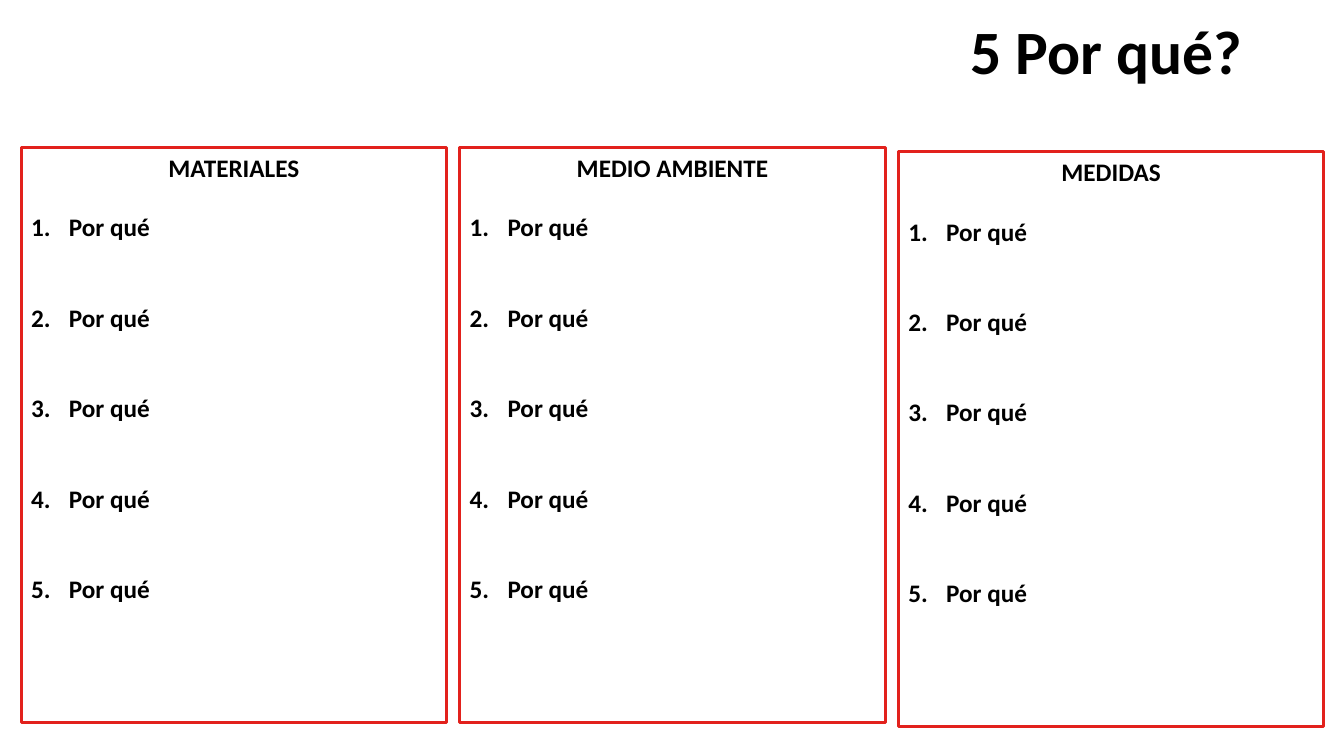
from lxml.etree import SubElement
from pptx import Presentation
from pptx.dml.color import RGBColor
from pptx.enum.shapes import MSO_SHAPE
from pptx.enum.text import MSO_ANCHOR, PP_ALIGN
from pptx.oxml.ns import qn
from pptx.util import Inches, Pt

COLORS = {"text": "000000", "frame": "E2211C", "background": "FFFFFF"}
FONT = "Calibri"
CATEGORIES = [("MATERIALES", 0), ("MEDIO AMBIENTE", 0), ("MEDIDAS", 0.04)]
WHY_COUNT = 5
COLUMN_LEFT, COLUMN_TOP = 0.21, 1.46
COLUMN_WIDTH, COLUMN_HEIGHT = 4.22, 5.71
COLUMN_STEP = 4.35


def color(name):
    """Return a named colour of the palette."""
    return RGBColor.from_string(COLORS[name])


def format_runs(paragraph, size):
    """Give all runs of a paragraph the bold slide font."""
    for run in paragraph.runs:
        run.font.name = FONT
        run.font.size = Pt(size)
        run.font.bold = True
        run.font.color.rgb = color("text")


def number_paragraph(paragraph):
    """Turn a paragraph into an item of a numbered list."""
    properties = paragraph._p.get_or_add_pPr()
    properties.set("marL", str(Inches(0.375)))
    properties.set("indent", str(-Inches(0.375)))
    SubElement(properties, qn("a:buFont"), typeface="+mj-lt")
    SubElement(properties, qn("a:buAutoNum"), type="arabicPeriod")


def add_title(slide, left, top, width, height):
    """Place the right-aligned slide title in its box."""
    title = slide.shapes.title
    title.left, title.top = Inches(left), Inches(top)
    title.width, title.height = Inches(width), Inches(height)
    title.text_frame.text = "5 Por qué?"
    title.text_frame.vertical_anchor = MSO_ANCHOR.MIDDLE
    paragraph = title.text_frame.paragraphs[0]
    paragraph.alignment = PP_ALIGN.RIGHT
    paragraph.line_spacing = 0.9
    format_runs(paragraph, 44)


def add_why_column(slide, heading, left, top, width, height):
    """Draw a framed column with a heading and its numbered questions."""
    column = slide.shapes.add_shape(
        MSO_SHAPE.RECTANGLE, Inches(left), Inches(top), Inches(width), Inches(height)
    )
    column.shadow.inherit = False
    column.fill.background()
    column.line.color.rgb = color("frame")
    column.line.width = Pt(2.25)
    text_frame = column.text_frame
    text_frame.word_wrap = True
    text_frame.vertical_anchor = MSO_ANCHOR.TOP
    text_frame.text = heading
    text_frame.paragraphs[0].alignment = PP_ALIGN.CENTER
    format_runs(text_frame.paragraphs[0], 18)
    for index in range(WHY_COUNT):
        paragraph = text_frame.add_paragraph()
        paragraph.text = "Por qué"
        paragraph.alignment = PP_ALIGN.LEFT
        paragraph.space_before = Pt(43 if index else 21)
        number_paragraph(paragraph)
        format_runs(paragraph, 18)


def main():
    """Build the slide and save it."""
    presentation = Presentation()
    presentation.slide_width = Inches(13.33)
    presentation.slide_height = Inches(7.5)
    slide = presentation.slides.add_slide(presentation.slide_layouts[5])
    slide.background.fill.solid()
    slide.background.fill.fore_color.rgb = color("background")
    add_title(slide, 0.92, -0.18, 11.5, 1.45)
    for index, (heading, drop) in enumerate(CATEGORIES):
        add_why_column(
            slide,
            heading,
            COLUMN_LEFT + index * COLUMN_STEP,
            COLUMN_TOP + drop,
            COLUMN_WIDTH,
            COLUMN_HEIGHT,
        )
    presentation.save("out.pptx")


if __name__ == "__main__":
    main()
